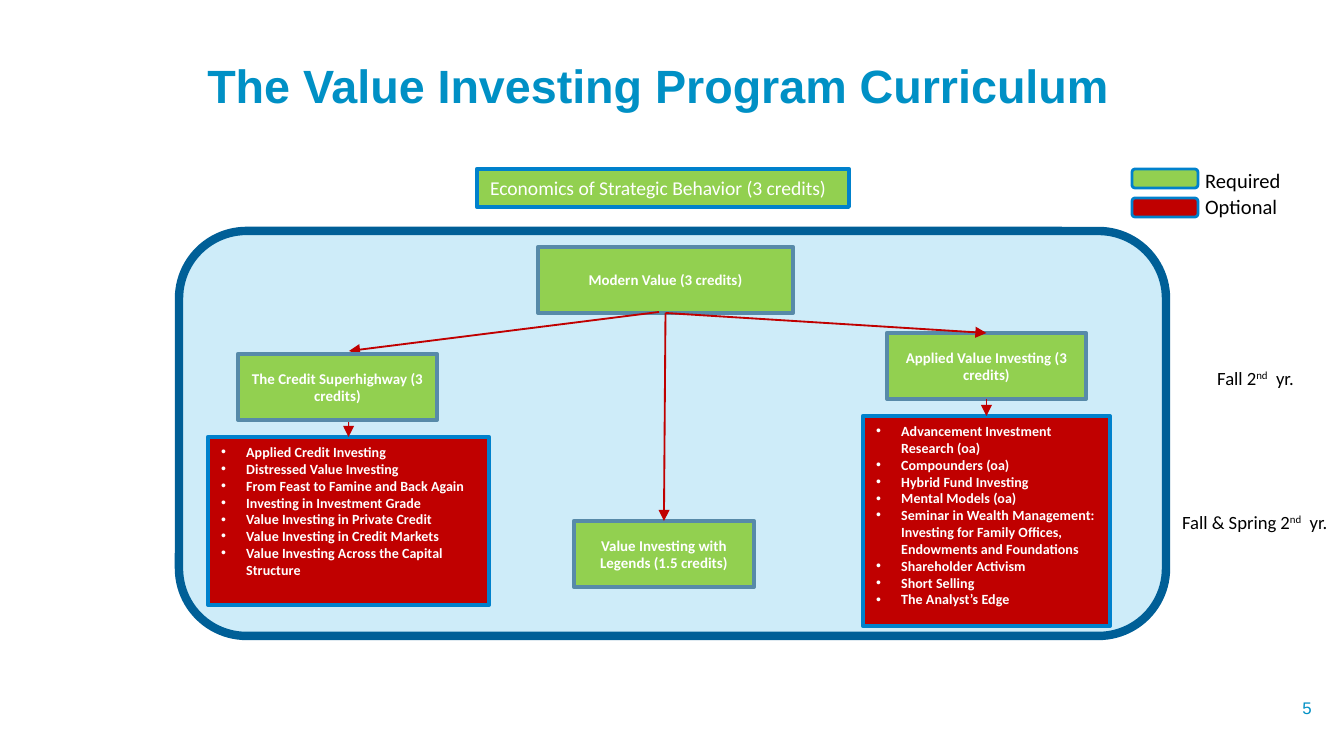
from lxml.etree import SubElement
from pptx import Presentation
from pptx.dml.color import RGBColor
from pptx.enum.shapes import MSO_CONNECTOR, MSO_SHAPE
from pptx.enum.text import MSO_ANCHOR, MSO_AUTO_SIZE, PP_ALIGN
from pptx.oxml.ns import qn
from pptx.util import Pt

PX = 914400 / 134.4
WIDTH, HEIGHT = 1344, 756
BULLET_INDENT = 25

COLORS = {
    "title": "0090C5", "required": "92D050", "optional": "C00000",
    "course_edge": "578AA9", "edge": "0081CC", "panel": "CEECF9",
    "panel_edge": "005F97", "white": "FFFFFF", "black": "000000",
}

TITLE = "The Value Investing Program Curriculum"
PAGE_NUMBER = "5"
PANEL = (179, 231, 987, 405)
PREREQUISITE = ("Economics of Strategic Behavior (3 credits)", (477, 169, 372, 38))

# name: (text, left, top, width)
COURSES = {
    "modern": ("Modern Value (3 credits)", 538, 247, 255),
    "applied": ("Applied Value Investing (3 credits)", 887, 333, 199),
    "legends": ("Value Investing with Legends (1.5 credits)", 574, 521, 180),
    "credit": ("The Credit Superhighway (3 credits)", 238, 354, 199),
}
COURSE_HEIGHT = 66

ELECTIVES = {
    "credit_list": ((208, 437, 281, 168), [
        "Applied Credit Investing",
        "Distressed Value Investing",
        "From Feast to Famine and Back Again",
        "Investing in Investment Grade",
        "Value Investing in Private Credit",
        "Value Investing in Credit Markets",
        "Value Investing Across the Capital Structure",
    ]),
    "applied_list": ((863, 416, 247, 210), [
        "Advancement Investment Research (oa)",
        "Compounders (oa)",
        "Hybrid Fund Investing",
        "Mental Models (oa)",
        "Seminar in Wealth Management: Investing for Family Offices, "
        "Endowments and Foundations",
        "Shareholder Activism",
        "Short Selling",
        "The Analyst’s Edge",
    ]),
}

# An end is a box name (joined bottom to top) or a free point; then width in points
ARROWS = [
    ("modern", "applied", 1),
    ("modern", "legends", 1),
    ((659, 312), (349, 351), 1),
    ("applied", "applied_list", 0.5),
    ((349, 395), "credit_list", 0.5),
]

TERMS = [("Fall 2", (1204, 360, 110, 36)), ("Fall & Spring 2", (1169, 504, 180, 36))]
# text, fill, key top, label top
LEGEND = [("Required", "required", 169, 161), ("Optional", "optional", 198, 187)]


def emu(*lengths):
    return [round(length * PX) for length in lengths]


def rgb(name):
    return RGBColor.from_string(COLORS[name])


def add_span(para, text, size, color, bold=False, name="Calibri"):
    span = para.add_run()
    span.text = text
    span.font.color.rgb = rgb(color)
    for key, value in {"size": Pt(size), "bold": bold, "name": name}.items():
        setattr(span.font, key, value)
    return span


def format_frame(box, **values):
    for key, value in values.items():
        setattr(box.text_frame, key, value)


def add_box(page, place, fill, edge, weight, kind=MSO_SHAPE.RECTANGLE):
    box = page.shapes.add_shape(kind, *emu(*place))
    box.shadow.inherit = False
    box.fill.solid()
    box.fill.fore_color.rgb = rgb(fill)
    box.line.color.rgb = rgb(edge)
    box.line.width = Pt(weight)
    return box


def add_label(page, place):
    """Add an unwrapped text box and return its paragraph."""
    box = page.shapes.add_textbox(*emu(*place))
    format_frame(box, word_wrap=False, auto_size=MSO_AUTO_SIZE.SHAPE_TO_FIT_TEXT)
    return box.text_frame.paragraphs[0]


def add_course(page, text, left, top, width):
    box = add_box(page, (left, top, width, COURSE_HEIGHT), "required", "course_edge", 2.25)
    format_frame(box, word_wrap=True, vertical_anchor=MSO_ANCHOR.MIDDLE)
    para = box.text_frame.paragraphs[0]
    para.alignment = PP_ALIGN.CENTER
    add_span(para, text, 8, "white", True)
    return box


def add_electives(page, place, items):
    box = add_box(page, place, "optional", "edge", 2.25)
    format_frame(box, word_wrap=True, vertical_anchor=MSO_ANCHOR.TOP)
    indent = emu(BULLET_INDENT)[0]
    for index, item in enumerate(items):
        para = box.text_frame.add_paragraph() if index else box.text_frame.paragraphs[0]
        para.alignment = PP_ALIGN.LEFT
        properties = para._p.get_or_add_pPr()
        properties.set("marL", str(indent))
        properties.set("indent", str(-indent))
        SubElement(properties, qn("a:buFont"), typeface="Arial")
        SubElement(properties, qn("a:buChar"), char="•")
        add_span(para, item, 7.5, "white", True)
    return box


def add_arrow(page, boxes, start, end, weight):
    begin_point = (0, 0) if start in boxes else start
    end_point = (0, 0) if end in boxes else end
    arrow = page.shapes.add_connector(MSO_CONNECTOR.STRAIGHT, *emu(*begin_point, *end_point))
    if start in boxes:
        arrow.begin_connect(boxes[start], 2)
    if end in boxes:
        arrow.end_connect(boxes[end], 0)
    arrow.line.color.rgb = rgb("optional")
    arrow.line.width = Pt(weight)
    SubElement(arrow.line._get_or_add_ln(), qn("a:tailEnd"), type="triangle")
    SubElement(arrow._element.spPr, qn("a:effectLst"))


def add_title(page):
    title = page.shapes.title
    title.left, title.top, title.width, title.height = emu(112, 63, 1105, 51)
    format_frame(title, word_wrap=True, auto_size=MSO_AUTO_SIZE.NONE,
                 vertical_anchor=MSO_ANCHOR.MIDDLE, margin_left=0)
    para = title.text_frame.paragraphs[0]
    para.alignment = PP_ALIGN.CENTER
    para.line_spacing = 0.9
    add_span(para, TITLE, 25, "title", True, "Arial")


def add_page_number(page):
    box = page.shapes.add_textbox(*emu(1216, 687, 109, 41))
    format_frame(box, word_wrap=True, vertical_anchor=MSO_ANCHOR.MIDDLE)
    para = box.text_frame.paragraphs[0]
    para.alignment = PP_ALIGN.RIGHT
    add_span(para, PAGE_NUMBER, 9, "title", name="Arial")


def main():
    deck = Presentation()
    deck.slide_width, deck.slide_height = emu(WIDTH, HEIGHT)
    page = deck.slides.add_slide(deck.slide_layouts[5])
    add_title(page)
    add_page_number(page)
    add_box(page, PANEL, "panel", "panel_edge", 4.5, MSO_SHAPE.ROUNDED_RECTANGLE)

    boxes = {name: add_electives(page, *entry) for name, entry in ELECTIVES.items()}
    for name, course in COURSES.items():
        boxes[name] = add_course(page, *course)
    for arrow in ARROWS:
        add_arrow(page, boxes, *arrow)
    # The credit course covers the start of the arrow below it
    page.shapes._spTree.append(boxes["credit"]._element)

    text, place = PREREQUISITE
    box = add_box(page, place, "required", "edge", 2.25)
    format_frame(box, word_wrap=False, auto_size=MSO_AUTO_SIZE.SHAPE_TO_FIT_TEXT,
                 vertical_anchor=MSO_ANCHOR.TOP)
    para = box.text_frame.paragraphs[0]
    para.alignment = PP_ALIGN.LEFT
    add_span(para, text, 10.5, "white")

    for text, place in TERMS:
        para = add_label(page, place)
        add_span(para, text, 10, "black")
        ordinal = add_span(para, "nd", 10, "black")
        ordinal._r.get_or_add_rPr().set("baseline", "30000")
        add_span(para, "  yr.", 10, "black")

    for text, fill, key_top, label_top in LEGEND:
        add_box(page, (1132, key_top, 66, 19), fill, "edge", 1.5, MSO_SHAPE.ROUNDED_RECTANGLE)
        add_span(add_label(page, (1192, label_top, 102, 39)), text, 11, "black")

    deck.save("out.pptx")


if __name__ == "__main__":
    main()
